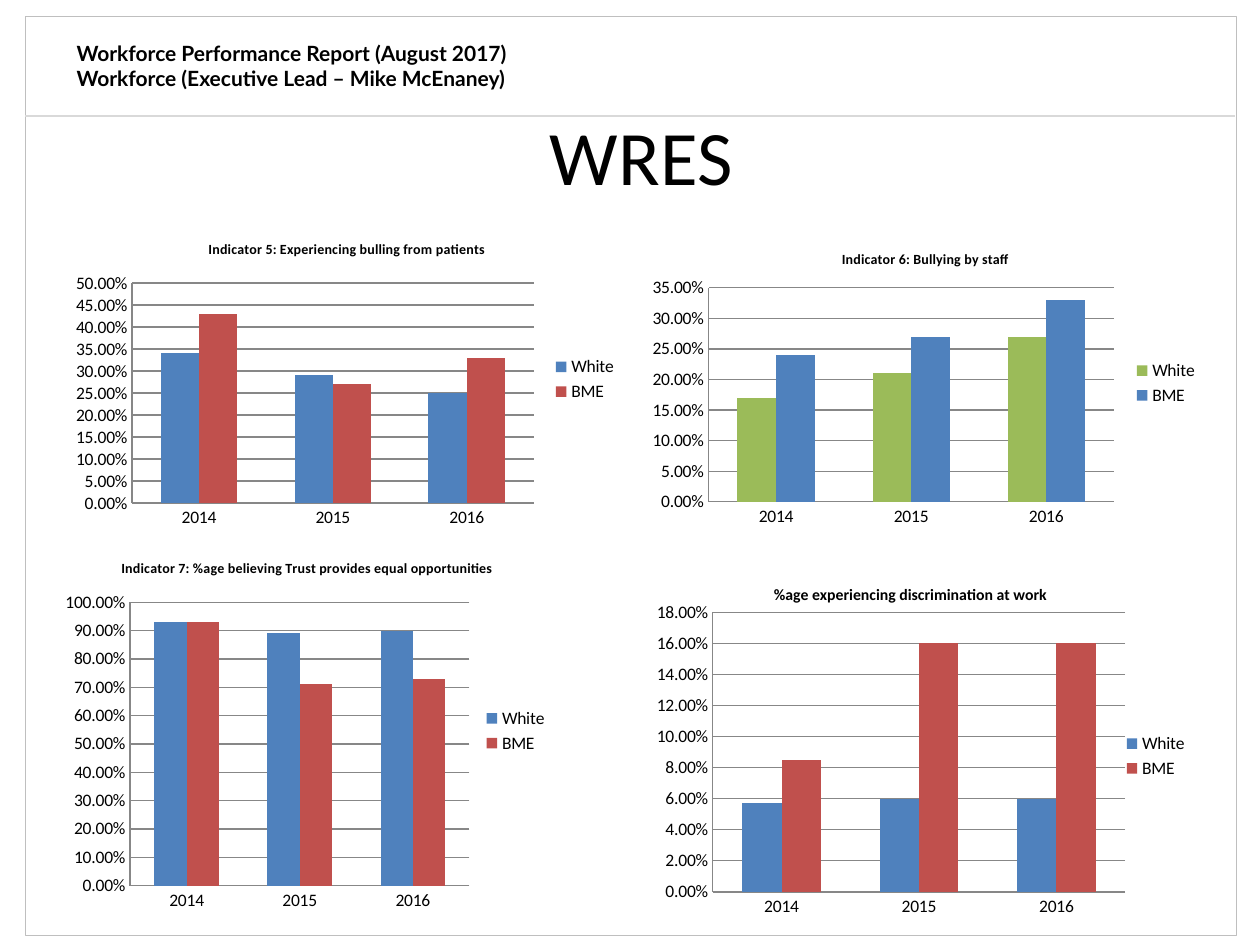
from dataclasses import dataclass

from lxml.etree import SubElement
from pptx import Presentation
from pptx.chart.data import CategoryChartData
from pptx.dml.color import RGBColor
from pptx.enum.chart import XL_CHART_TYPE as ChartType
from pptx.enum.chart import XL_LEGEND_POSITION as LegendSide
from pptx.enum.chart import XL_TICK_MARK as Tick
from pptx.enum.shapes import MSO_CONNECTOR as Connector
from pptx.enum.shapes import MSO_SHAPE as Shape
from pptx.enum.text import MSO_ANCHOR as Anchor
from pptx.enum.text import PP_ALIGN as Align
from pptx.oxml.ns import qn
from pptx.util import Inches, Pt


@dataclass(frozen=True)
class Theme:
    ink: str = "000000"
    frame: str = "BFBFBF"
    divider: str = "D9D9D9"
    grid: str = "878787"
    blue: str = "4F81BD"
    red: str = "C0504D"
    green: str = "9BBB59"
    body_font: str = "Calibri"
    header_font: str = "Lato"
    title_size: int = 44
    header_size: int = 12
    chart_size: int = 10


THEME = Theme()

# Content
HEADER = ["Workforce Performance Report (August 2017)",
          "Workforce (Executive Lead – Mike McEnaney)"]
TITLE = "WRES"
YEARS = ["2014", "2015", "2016"]
GROUPS = ["White", "BME"]

# box: left, top, width, height in inches; plot: shares of the chart's size
CHARTS = [
    dict(title="Indicator 5: Experiencing bulling from patients", title_size=8,
         box=(0.51, 1.78, 4.49, 2.46), plot=(0.12, 0.19, 0.71, 0.71),
         values=[(0.34, 0.29, 0.25), (0.43, 0.27, 0.33)],
         colors=(THEME.blue, THEME.red), top=0.5, step=0.05),
    dict(title="Indicator 6: Bullying by staff", title_size=8,
         box=(5.08, 1.86, 4.53, 2.36), plot=(0.12, 0.18, 0.71, 0.72),
         values=[(0.17, 0.21, 0.27), (0.24, 0.27, 0.33)],
         colors=(THEME.green, THEME.blue), top=0.35, step=0.05),
    dict(title="Indicator 7: %age believing Trust provides equal opportunities",
         title_size=8,
         box=(0.43, 4.3, 4.02, 3), plot=(0.15, 0.16, 0.67, 0.75),
         values=[(0.93, 0.89, 0.9), (0.93, 0.71, 0.73)],
         colors=(THEME.blue, THEME.red), top=1, step=0.1),
    dict(title="%age experiencing discrimination at work", title_size=9,
         box=(4.92, 4.5, 4.61, 3), plot=(0.16, 0.12, 0.71, 0.74),
         values=[(0.057, 0.06, 0.06), (0.085, 0.16, 0.16)],
         colors=(THEME.blue, THEME.red), top=0.18, step=0.02),
]


def rgb(value):
    return RGBColor.from_string(value)


def style_font(font, size, name=THEME.body_font, bold=False):
    font.size, font.name, font.bold = Pt(size), name, bold
    font.color.rgb = rgb(THEME.ink)


def style_line(line, color, width):
    line.color.rgb = rgb(color)
    line.width = Pt(width)


def place_plot(chart, shares):
    """Fix the inner plot area at the given shares of the chart."""
    area = chart.plots[0]._element.getparent()
    layout = area.find(qn("c:layout"))
    if layout is None:
        layout = SubElement(area, qn("c:layout"))
        area.insert(0, layout)
    manual = SubElement(layout, qn("c:manualLayout"))
    settings = [("layoutTarget", "inner"), ("xMode", "edge"), ("yMode", "edge")]
    settings += zip("xywh", shares)
    for tag, value in settings:
        SubElement(manual, qn(f"c:{tag}")).set("val", str(value))


def add_column_chart(page, item):
    data = CategoryChartData(number_format="0.00%")
    data.categories = YEARS
    for group, values in zip(GROUPS, item["values"]):
        data.add_series(group, values)
    box = [Inches(length) for length in item["box"]]
    chart = page.shapes.add_chart(ChartType.COLUMN_CLUSTERED, *box, data).chart
    style_font(chart.font, THEME.chart_size)

    para = chart.chart_title.text_frame.paragraphs[0]
    span = para.add_run()
    span.text = item["title"]
    style_font(span.font, item["title_size"], bold=True)
    chart.chart_title.include_in_layout = False

    chart.has_legend = True
    chart.legend.position = LegendSide.RIGHT
    chart.legend.include_in_layout = False

    plot = chart.plots[0]
    plot.gap_width, plot.overlap, plot.vary_by_categories = 150, 0, False
    for series, color in zip(plot.series, item["colors"]):
        series.format.fill.solid()
        series.format.fill.fore_color.rgb = rgb(color)

    for axis in (chart.category_axis, chart.value_axis):
        axis.major_tick_mark = axis.minor_tick_mark = Tick.NONE
        style_line(axis.format.line, THEME.grid, 0.75)
    scale = chart.value_axis
    scale.minimum_scale, scale.maximum_scale = 0, item["top"]
    scale.major_unit = item["step"]
    scale.tick_labels.number_format = "0.00%"
    scale.tick_labels.number_format_is_linked = False
    scale.has_major_gridlines = True
    style_line(scale.major_gridlines.format.line, THEME.grid, 0.75)
    place_plot(chart, item["plot"])


def main():
    deck = Presentation()
    deck.slide_width, deck.slide_height = Inches(10), Inches(7.5)
    page = deck.slides.add_slide(deck.slide_layouts[5])

    # Page frame and header divider
    frame = page.shapes.add_shape(Shape.RECTANGLE, Inches(0.2), Inches(0.13),
                                  Inches(9.61), Inches(7.29))
    frame.shadow.inherit = False
    frame.fill.background()
    style_line(frame.line, THEME.frame, 0.25)
    divider = page.shapes.add_connector(Connector.STRAIGHT, Inches(0.2),
                                        Inches(0.92), Inches(9.8), Inches(0.92))
    style_line(divider.line, THEME.divider, 0.75)
    SubElement(divider._element.spPr, qn("a:effectLst"))

    # Report header
    box = page.shapes.add_textbox(Inches(0.51), Inches(0.27),
                                  Inches(5), Inches(0.5))
    box.text_frame.word_wrap = True
    para = box.text_frame.paragraphs[0]
    for index, line in enumerate(HEADER):
        if index:
            para.add_line_break()
        span = para.add_run()
        span.text = line
        style_font(span.font, THEME.header_size, THEME.header_font, bold=True)

    # Title
    title = page.shapes.title
    title.left, title.top = Inches(0.59), Inches(0.6)
    title.width, title.height = Inches(9), Inches(1.25)
    title.text_frame.vertical_anchor = Anchor.MIDDLE
    para = title.text_frame.paragraphs[0]
    para.alignment = Align.CENTER
    span = para.add_run()
    span.text = TITLE
    style_font(span.font, THEME.title_size)

    # Charts
    for item in CHARTS:
        add_column_chart(page, item)

    deck.save("out.pptx")


if __name__ == "__main__":
    main()
